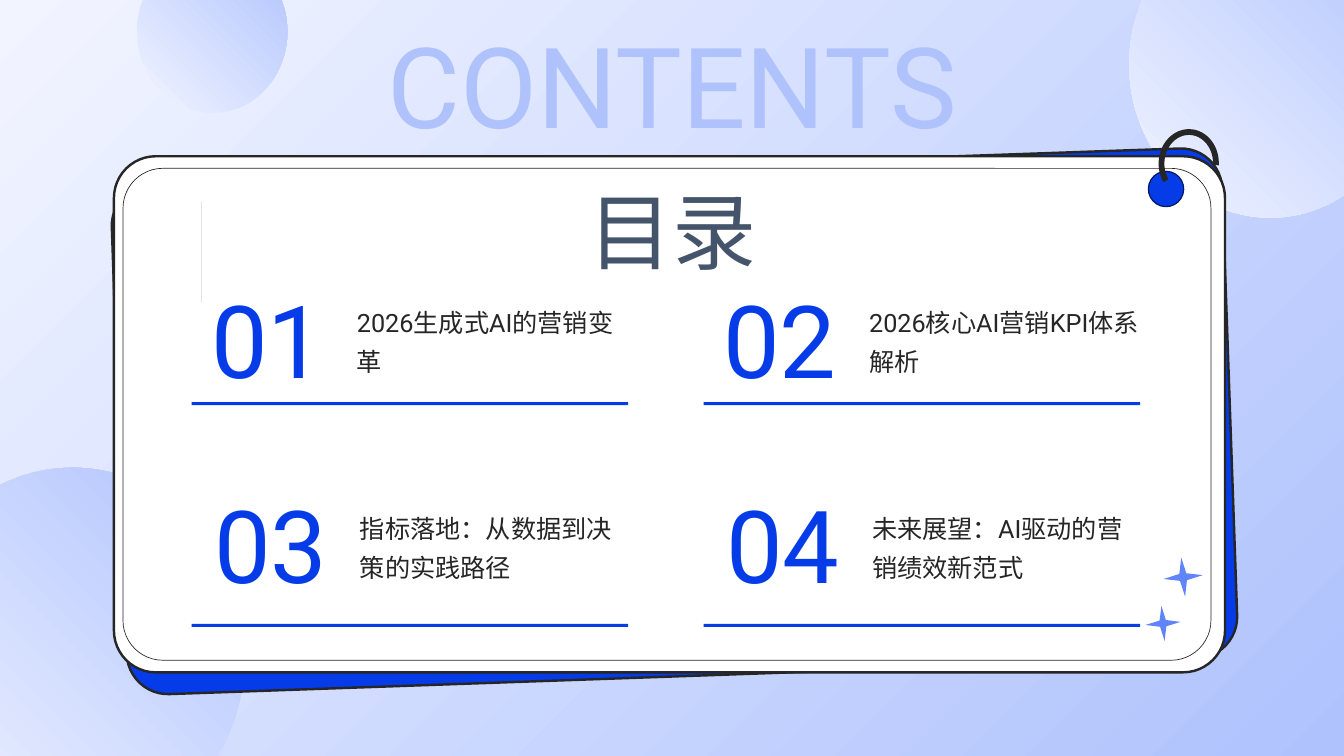
from pptx import Presentation
from pptx import util as u
from pptx.dml.color import RGBColor
from pptx.enum import shapes, text

BLUE, INK, PALE, SKY = "063CE8", "262626", "F2F5FF", "AFC2FD"
KIND = shapes.MSO_SHAPE


def rgb(value):
    return RGBColor.from_string(value)


def add_shape(slide, kind, x, y, w, h, fill=None, grad=None, line=None,
              weight=1, rot=0, adj=()):
    """Place a preset shape; grad is (start, end, clockwise angle)."""
    sp = slide.shapes.add_shape(kind, u.Inches(x), u.Inches(y), u.Inches(w), u.Inches(h))
    for i, value in enumerate(adj):
        sp.adjustments[i] = value
    sp.rotation = rot
    return paint(sp, fill, grad, line, weight)


def paint(sp, fill=None, grad=None, line=None, weight=1):
    sp.shadow.inherit = False
    if grad:
        start, end, angle = grad
        sp.fill.gradient()
        sp.fill.gradient_angle = 360 - angle
        for stop, color in zip(sp.fill.gradient_stops, (start, end)):
            stop.color.rgb = rgb(color)
    elif fill:
        sp.fill.solid()
        sp.fill.fore_color.rgb = rgb(fill)
    else:
        sp.fill.background()
    if line:
        sp.line.color.rgb = rgb(line)
        sp.line.width = u.Pt(weight)
    else:
        sp.line.fill.background()
    return sp


def add_text(slide, content, x, y, w, h, size=18, color=INK, align="LEFT",
             anchor="TOP", spacing=1.0):
    sp = slide.shapes.add_textbox(u.Inches(x), u.Inches(y), u.Inches(w), u.Inches(h))
    tf = sp.text_frame
    tf.word_wrap = True
    tf.margin_left = tf.margin_right = tf.margin_top = tf.margin_bottom = 0
    tf.vertical_anchor = text.MSO_ANCHOR[anchor]
    p = tf.paragraphs[0]
    p.alignment = text.PP_ALIGN[align]
    p.line_spacing = spacing
    r = p.add_run()
    r.text = content
    r.font.name = "Roboto"
    r.font.size = u.Pt(size)
    r.font.color.rgb = rgb(color)


def add_backdrop(slide, w, h):
    add_shape(slide, KIND.RECTANGLE, 0, 0, w, h, grad=(PALE, SKY, 45))
    for box in ((-0.99, 4.64, 3.42, 3.71), (11.2, -0.88, 2.8, 3.04),
                (1.36, -0.49, 1.49, 1.61)):
        add_shape(slide, KIND.OVAL, *box, grad=(PALE, SKY, 315))


def bezier(p0, p1, p2, p3, steps=8):
    """Points along a cubic curve, without its start."""
    points = []
    for i in range(1, steps + 1):
        t = i / steps
        s = 1 - t
        points.append(tuple(s**3 * a + 3 * s * s * t * b + 3 * s * t * t * c + t**3 * d
                            for a, b, c, d in zip(p0, p1, p2, p3)))
    return points


def add_quote_mark(slide, x, y):
    mark = [(0.16, 0), (0.16, 0.08)]
    mark += bezier((0.16, 0.08), (0.11, 0.08), (0.08, 0.13), (0.08, 0.22))
    mark += [(0.16, 0.22), (0.16, 0.38), (0, 0.38), (0, 0.22)]
    mark += bezier((0, 0.22), (0, 0.16), (0.02, 0.1), (0.04, 0.06))
    mark += bezier((0.04, 0.06), (0.07, 0.02), (0.11, 0), (0.16, 0))
    builder = None
    for dx in (0.23, 0):
        points = [(x + dx + px, y + py) for px, py in mark]
        if builder is None:
            builder = slide.shapes.build_freeform(*points[0], scale=u.Inches(1))
        else:
            builder.move_to(*points[0])
        builder.add_line_segments(points[1:], close=True)
    paint(builder.convert_to_shape(), fill=INK)


def add_card(slide, x, y, w, h):
    # Tilted blue card behind, white card and its inner frame
    add_shape(slide, KIND.ROUNDED_RECTANGLE, x + 0.05, y + 0.1, w, h - 0.06, fill=BLUE,
              line=INK, weight=1.73, rot=358, adj=[0.081])
    add_shape(slide, KIND.ROUNDED_RECTANGLE, x, y, w, h, fill="FFFFFF",
              line=INK, weight=1.73, adj=[0.081])
    add_shape(slide, KIND.ROUNDED_RECTANGLE, x + 0.09, y + 0.12, w - 0.23, h - 0.24,
              fill="FFFFFF", line=INK, weight=0.47, adj=[0.081])
    # Sparkles
    for dx, dy, size, rot in ((10.23, 4.46, 0.35, 354.9), (10.41, 3.98, 0.39, 354.3)):
        add_shape(slide, KIND.STAR_4_POINT, x + dx, y + dy, size, size,
                  fill="6085FB", rot=rot)
    add_quote_mark(slide, x + 0.5, y + 0.61)
    # Hole and ring
    add_shape(slide, KIND.OVAL, x + 10.26, y + 0.15, 0.35, 0.35, fill=BLUE,
              line="031A66", weight=0.92, rot=2)
    add_shape(slide, KIND.ARC, x + 10.39, y - 0.24, 0.54, 0.62,
              line=INK, weight=4.14, rot=2, adj=[84.185, 1.092])


def add_entry(slide, number, title, x, y, rule_x, rule_y):
    add_shape(slide, KIND.RECTANGLE, rule_x, rule_y, 4.33, 0.03, fill=BLUE)
    add_text(slide, number, x, y, 2.01, 1.48, size=72, color=BLUE,
             align="CENTER", anchor="MIDDLE")
    add_text(slide, title, x + 1.89, y + 0.14, 2.72, 1.2, anchor="MIDDLE", spacing=1.3)


def add_entries(slide, titles, x, y):
    for i, title in enumerate(titles):
        row, col = divmod(i, 2)
        left = x + 5.08 * col
        add_entry(slide, f"{i + 1:02}", title, left + 0.03 * row, y + 2.04 * row,
                  left + 0.25, y + 1.38 + 2.2 * row)


def add_headings(slide):
    add_text(slide, "目录", 5.2, 1.68, 2.94, 1.02, size=60, color="44546A",
             align="CENTER", spacing=1.1)
    add_text(slide, "CONTENTS", 2.04, 0.16, 9.26, 1.19, size=80, color="AFC2FB",
             align="CENTER")


def main():
    prs = Presentation()
    prs.slide_width, prs.slide_height = u.Inches(13.33), u.Inches(7.5)
    slide = prs.slides.add_slide(prs.slide_layouts[6])
    add_backdrop(slide, 13.33, 7.5)
    add_card(slide, 1.13, 1.55, 11.02, 5.12)
    add_entries(slide, ["2026生成式AI的营销变革", "2026核心AI营销KPI体系解析",
                        "指标落地：从数据到决策的实践路径",
                        "未来展望：AI驱动的营销绩效新范式"], 1.65, 2.61)
    add_headings(slide)
    prs.save("out.pptx")


if __name__ == "__main__":
    main()
